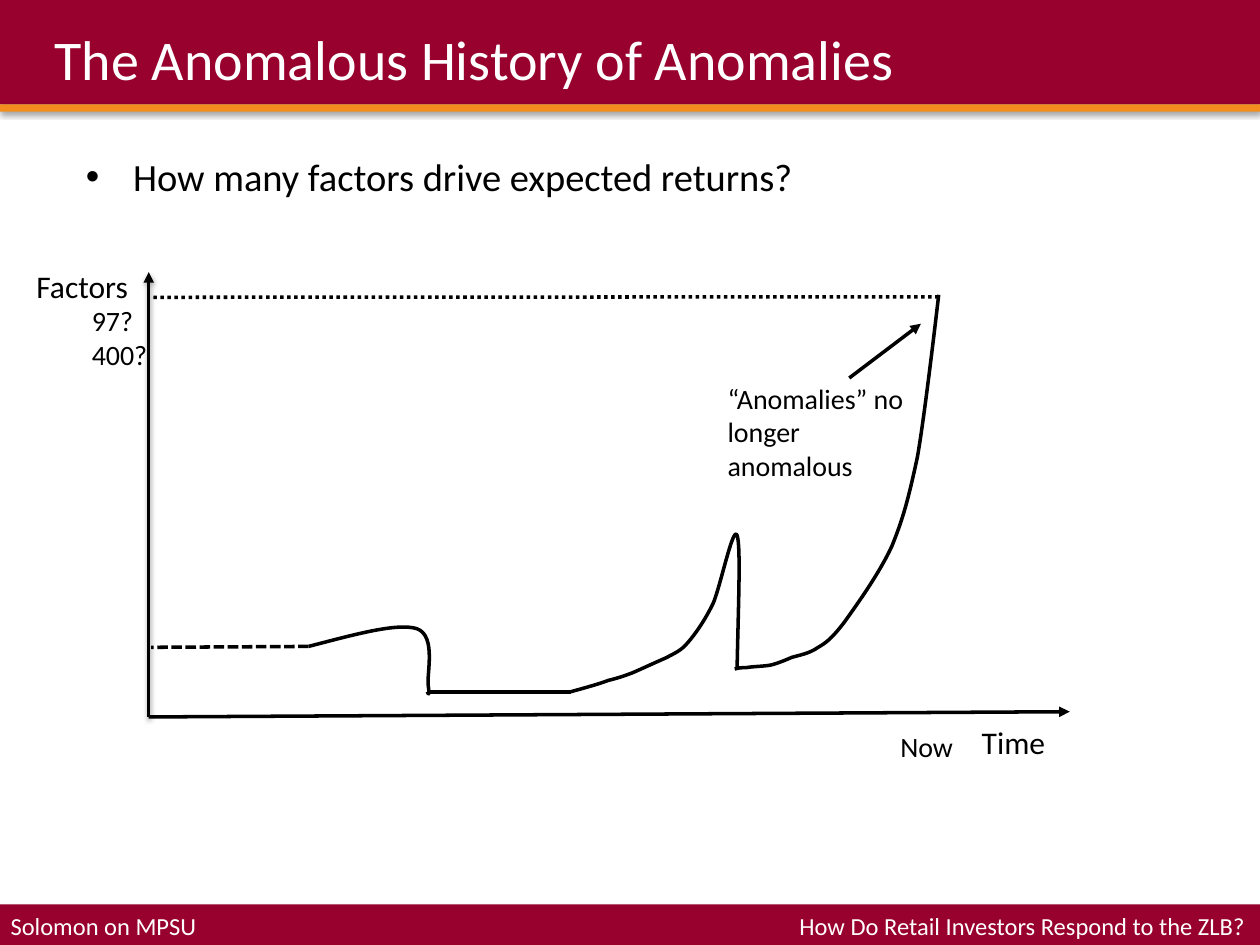
from lxml import etree
from pptx import Presentation
from pptx.dml.color import RGBColor
from pptx.enum import dml, shapes, text
from pptx.oxml import ns
from pptx.util import Pt

FONT = "Calibri"
RED, ORANGE, WHITE, BLACK = "98012E", "F38D1E", "FFFFFF", "000000"
PAGE_WIDTH, PAGE_HEIGHT = 720, 540
UNITS = 100  # freeform units per point

# Each curve: a start point, then cubic segments of two controls and an end,
# in points from the top left of the plot.
EARLY_RISE = [
    (91.4, 213.9),
    (116.6, 207.4), (141.8, 200.2), (153.3, 203.8),
    (164.8, 208.1), (158.4, 231.1), (159.8, 236.9),
    (160.5, 242.7), (159.8, 241.2), (159.1, 239.8),
]
SPIKE = [
    (241.2, 239.8),
    (249.1, 237.6), (257, 235.5), (262.8, 233.3),
    (268.5, 231.9), (270.7, 231.1), (276.4, 229),
    (281.5, 226.8), (290.8, 222.5), (295.9, 220.3),
    (300.9, 217.5), (303.8, 216.7), (308.1, 211.7),
    (312.4, 206.7), (317.5, 199.5), (322.5, 189.4),
    (326.8, 179.3), (334, 144), (336.2, 150.5),
    (338.4, 156.3), (336.9, 191.5), (336.2, 226.1),
]
TAKEOFF = [
    (334.8, 226.8),
    (336.9, 226.1), (338.4, 226.1), (341.2, 226.1),
    (344.8, 225.4), (350.6, 225.4), (354.9, 224.7),
    (359.2, 223.9), (367.2, 220.3), (367.2, 220.3),
    (371.5, 218.9), (377.2, 218.2), (382.3, 214.6),
    (387.3, 211.7), (390.2, 209.5), (397.4, 200.2),
    (404.6, 190.1), (417.6, 172.1), (424.8, 156.3),
    (431.2, 140.4), (434.1, 129.6), (439.2, 105.9),
    (443.5, 82.1), (451.4, 13), (451.4, 13),
]


def color(value):
    return RGBColor.from_string(value)


def add_child(parent, tag, **attributes):
    child = etree.SubElement(parent, ns.qn(tag))
    for name, value in attributes.items():
        child.set(name, str(value))
    return child


def set_shadow(shape, opacity=0, distance=1.6):
    """Replace the theme shadow by a downward one, or by none."""
    effects = add_child(shape._element.spPr, "a:effectLst")
    if opacity:
        outer = add_child(effects, "a:outerShdw", blurRad=Pt(3.1), dist=Pt(distance),
                          dir=90 * 60000, rotWithShape=0)
        add_child(add_child(outer, "a:srgbClr", val=BLACK), "a:alpha", val=opacity * 1000)


def write(shape, words, size=16, fill=BLACK, align=text.PP_ALIGN.LEFT,
          anchor=text.MSO_ANCHOR.TOP, inset=(7.2, 3.6), bullet=None, after=0,
          fit=text.MSO_AUTO_SIZE.NONE):
    frame = shape.text_frame
    frame.word_wrap = True
    frame.auto_size = fit
    frame.vertical_anchor = anchor
    frame.margin_left = frame.margin_right = Pt(inset[0])
    frame.margin_top = frame.margin_bottom = Pt(inset[1])
    para = frame.paragraphs[0]
    para.text = words
    para.alignment = align
    para.space_before, para.space_after = Pt(0), Pt(after)
    if bullet:
        properties = para._p.get_or_add_pPr()
        properties.set("marL", str(Pt(27)))
        properties.set("indent", str(-Pt(27)))
        add_child(properties, "a:buFont", typeface="Arial")
        add_child(properties, "a:buChar", char=bullet)
    for span in para.runs:
        span.font.name, span.font.size = FONT, Pt(size)
        span.font.color.rgb = color(fill)


def add_text(page, box, words, **style):
    write(page.shapes.add_textbox(*map(Pt, box)), words, **style)


def add_bar(page, box, fill, **shadow):
    bar = page.shapes.add_shape(shapes.MSO_SHAPE.RECTANGLE, *map(Pt, box))
    bar.fill.solid()
    bar.fill.fore_color.rgb = color(fill)
    bar.line.fill.background()
    set_shadow(bar, **shadow)


def style_line(line, dash=None, arrow=False):
    line.color.rgb = color(BLACK)
    line.width = Pt(2)
    if dash:
        line.dash_style = dash
    if arrow:
        add_child(line._get_or_add_ln(), "a:tailEnd", type="triangle")


def add_line(page, start, end, shadow=0, **style):
    line = page.shapes.add_connector(
        shapes.MSO_CONNECTOR.STRAIGHT, *map(Pt, (*start, *end)))
    style_line(line.line, **style)
    set_shadow(line, shadow)


def add_curve(page, left, top, knots):
    """Outline the segment ends, then bend each segment with its two controls."""
    points = [(round((left + x) * UNITS), round((top + y) * UNITS)) for x, y in knots]
    ends = points[::3]
    builder = page.shapes.build_freeform(*ends[0], scale=Pt(1) / UNITS)
    builder.add_line_segments(ends[1:], close=False)
    curve = builder.convert_to_shape()

    min_x, min_y = (min(values) for values in zip(*ends))
    segments = list(curve._element.iter(ns.qn("a:lnTo")))
    for number, segment in enumerate(segments):
        bend = etree.Element(ns.qn("a:cubicBezTo"))
        for x, y in points[3 * number + 1:3 * number + 4]:
            add_child(bend, "a:pt", x=x - min_x, y=y - min_y)
        segment.getparent().replace(segment, bend)

    curve.fill.background()
    style_line(curve.line)
    set_shadow(curve)


def add_footer(page, left, top, width, height):
    add_bar(page, (left, top, width, height), RED, opacity=35, distance=1.8)
    style = dict(size=14, fill=WHITE, inset=(0, 0), fit=text.MSO_AUTO_SIZE.SHAPE_TO_FIT_TEXT)
    add_text(page, (left + 6, top + 3.7, 270, 17), "Solomon on MPSU", **style)
    add_text(page, (left + width - 300, top + 3.7, 291.5, 17),
             "How Do Retail Investors Respond to the ZLB?",
             align=text.PP_ALIGN.RIGHT, **style)


def add_header(page, left, top, width, height):
    add_bar(page, (left, top, width, height), RED, opacity=35, distance=1.8)
    add_bar(page, (left, top + height, width, 4.1), ORANGE, opacity=38)
    title = page.shapes.title
    title._element.getparent().append(title._element)  # in front of the bars
    title.left, title.top, title.width, title.height = map(
        Pt, (left + 24, top + 12, 648, 42))
    write(title, "The Anomalous History of Anomalies", size=32, fill=WHITE,
          anchor=text.MSO_ANCHOR.MIDDLE)


def add_plot(page, left, top, width, height):
    def at(x, y):
        return left + x, top + y

    dashes = dml.MSO_LINE
    add_line(page, at(0, height), at(0, 0), arrow=True, shadow=38)
    add_line(page, at(0, height), at(width, height - 3), arrow=True)
    for knots in (EARLY_RISE, SPIKE, TAKEOFF):
        add_curve(page, left, top, knots)
    add_line(page, at(159.1, 239.8), at(241.2, 239.8))
    add_line(page, at(91.4, 213.9), at(1.4, 214.4), dash=dashes.SQUARE_DOT)
    add_line(page, at(451.4, 14.1), at(0, 14.4), dash=dashes.ROUND_DOT)
    add_line(page, at(400.3, 60.5), at(441.3, 29.5), arrow=True)

    labels = [
        ("Factors", -71.3, -6.5, 71.3, 29, 18),
        ("Time", 468.9, 254.2, 71.3, 29, 18),
        ("Now", 422.4, 257.8, 100, 26.6, 16),
        ("“Anomalies” no longer anomalous", 323.7, 58.8, 117.4, 85, 16),
        ("97? \v400?", -39.6, 14.4, 79.2, 46, 16),
    ]
    for words, x, y, wide, high, size in labels:
        add_text(page, (*at(x, y), wide, high), words, size=size,
                 fit=text.MSO_AUTO_SIZE.SHAPE_TO_FIT_TEXT)


def main():
    deck = Presentation()
    deck.slide_width, deck.slide_height = Pt(PAGE_WIDTH), Pt(PAGE_HEIGHT)
    page = deck.slides.add_slide(deck.slide_layouts.get_by_name("Title Only"))
    add_footer(page, 0, 516.8, PAGE_WIDTH, 23.2)
    add_header(page, 0, 0, PAGE_WIDTH, 59.7)
    add_text(page, (42, 84, 630, 396), "How many factors drive expected returns?",
             size=22, bullet="•", after=12)
    add_plot(page, 85, 155.5, 526.3, 254.2)
    deck.save("out.pptx")


if __name__ == "__main__":
    main()
